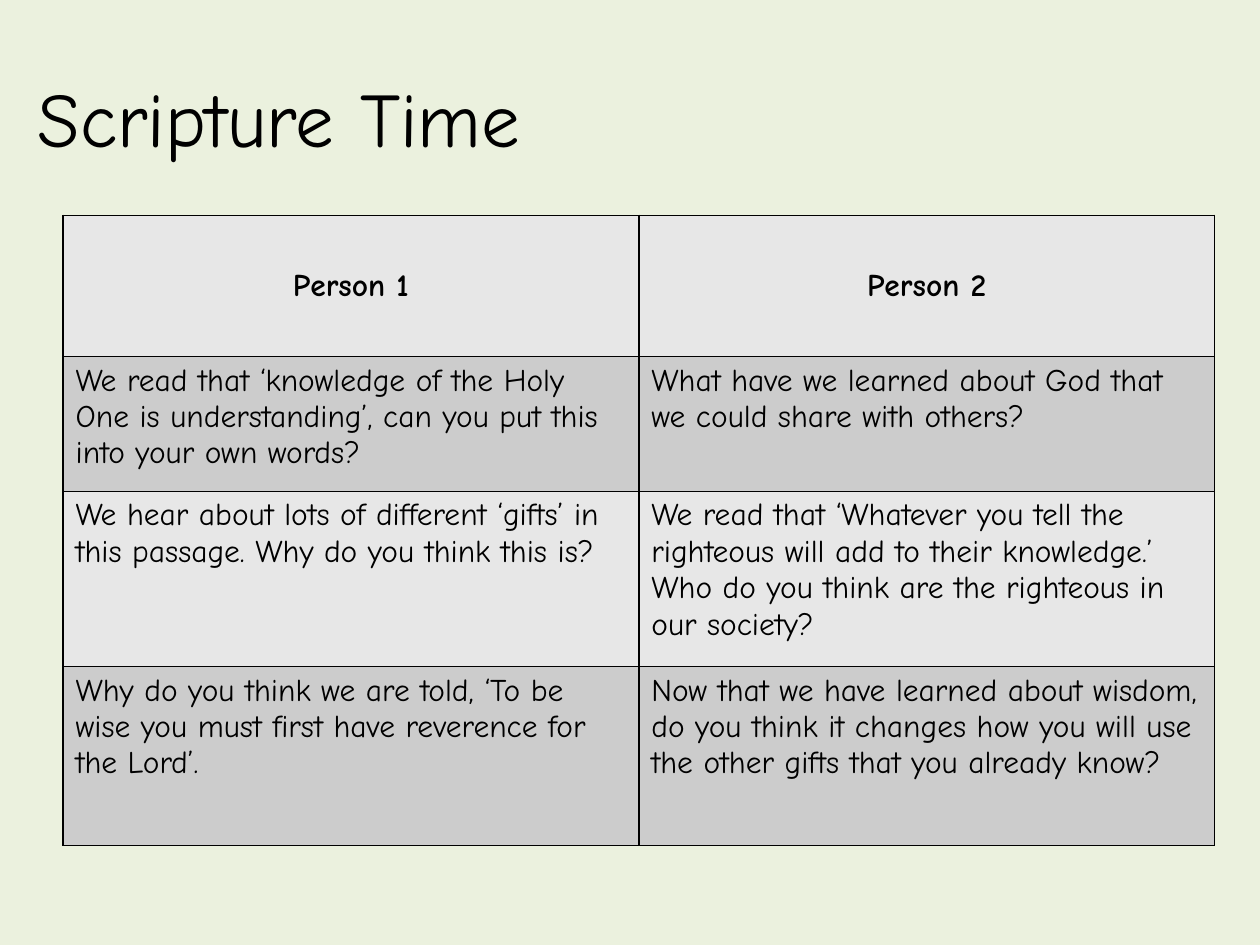
from lxml import etree
from pptx import Presentation
from pptx import util as u
from pptx.dml.color import RGBColor
from pptx.enum import text
from pptx.oxml.ns import qn

theme = {
    "font": "Comic Neue", "ink": "000000", "back": "EBF1DE",
    "bands": ["E7E7E7", "CCCCCC"], "title": 44, "body": 18, "edge": 1,
}
rows = [
    ("Person 1", "Person 2"),
    ("We read that ‘knowledge of the Holy One is understanding’, can you put this into your own words?",
     "What have we learned about God that we could share with others?"),
    ("We hear about lots of different ‘gifts’ in this passage. Why do you think this is?",
     "We read that ‘Whatever you tell the righteous will add to their knowledge.’ "
     "Who do you think are the righteous in our society?"),
    ("Why do you think we are told, ‘To be wise you must first have reverence for the Lord’.",
     "Now that we have learned about wisdom, do you think it changes how you will use "
     "the other gifts that you already know?"),
]
tall = [1.12, 1.07, 1.39, 1.42]
wide = 4.57


def write(frame, words, size, bold=False, align=text.PP_ALIGN.LEFT):
    par = frame.paragraphs[0]
    par.alignment = align
    run = par.add_run()
    run.text = words
    style = {"name": theme["font"], "size": u.Pt(size), "bold": bold}
    for key, val in style.items():
        setattr(run.font, key, val)
    run.font.color.rgb = RGBColor.from_string(theme["ink"])


def border(cell):
    props = cell._tc.get_or_add_tcPr()
    for spot, side in enumerate(("lnL", "lnR", "lnT", "lnB")):
        line = etree.Element(qn(f"a:{side}"), w=str(u.Pt(theme["edge"])))
        fill = etree.SubElement(line, qn("a:solidFill"))
        etree.SubElement(fill, qn("a:srgbClr"), val=theme["ink"])
        props.insert(spot, line)


# Slide and background
deck = Presentation()
deck.slide_width, deck.slide_height = u.Inches(10), u.Inches(7.5)
slide = deck.slides.add_slide(deck.slide_layouts[6])
slide.background.fill.solid()
slide.background.fill.fore_color.rgb = RGBColor.from_string(theme["back"])

# Title
box = slide.shapes.add_textbox(*map(u.Inches, (0.2, 0.3, 9.3, 1.25)))
frame = box.text_frame
form = {"word_wrap": True, "vertical_anchor": text.MSO_ANCHOR.MIDDLE}
for key, val in form.items():
    setattr(frame, key, val)
write(frame, "Scripture Time", theme["title"])

# Table of questions
area = map(u.Inches, (0.5, 1.71, 2 * wide, sum(tall)))
table = slide.shapes.add_table(len(rows), 2, *area).table
for col in table.columns:
    col.width = u.Inches(wide)
for r, pair in enumerate(rows):
    table.rows[r].height = u.Inches(tall[r])
    head = r == 0
    for c, words in enumerate(pair):
        cell = table.cell(r, c)
        cell.fill.solid()
        cell.fill.fore_color.rgb = RGBColor.from_string(theme["bands"][r % 2])
        border(cell)
        cell.vertical_anchor = text.MSO_ANCHOR.MIDDLE if head else text.MSO_ANCHOR.TOP
        align = text.PP_ALIGN.CENTER if head else text.PP_ALIGN.LEFT
        write(cell.text_frame, words, theme["body"], head, align)

deck.save("out.pptx")
